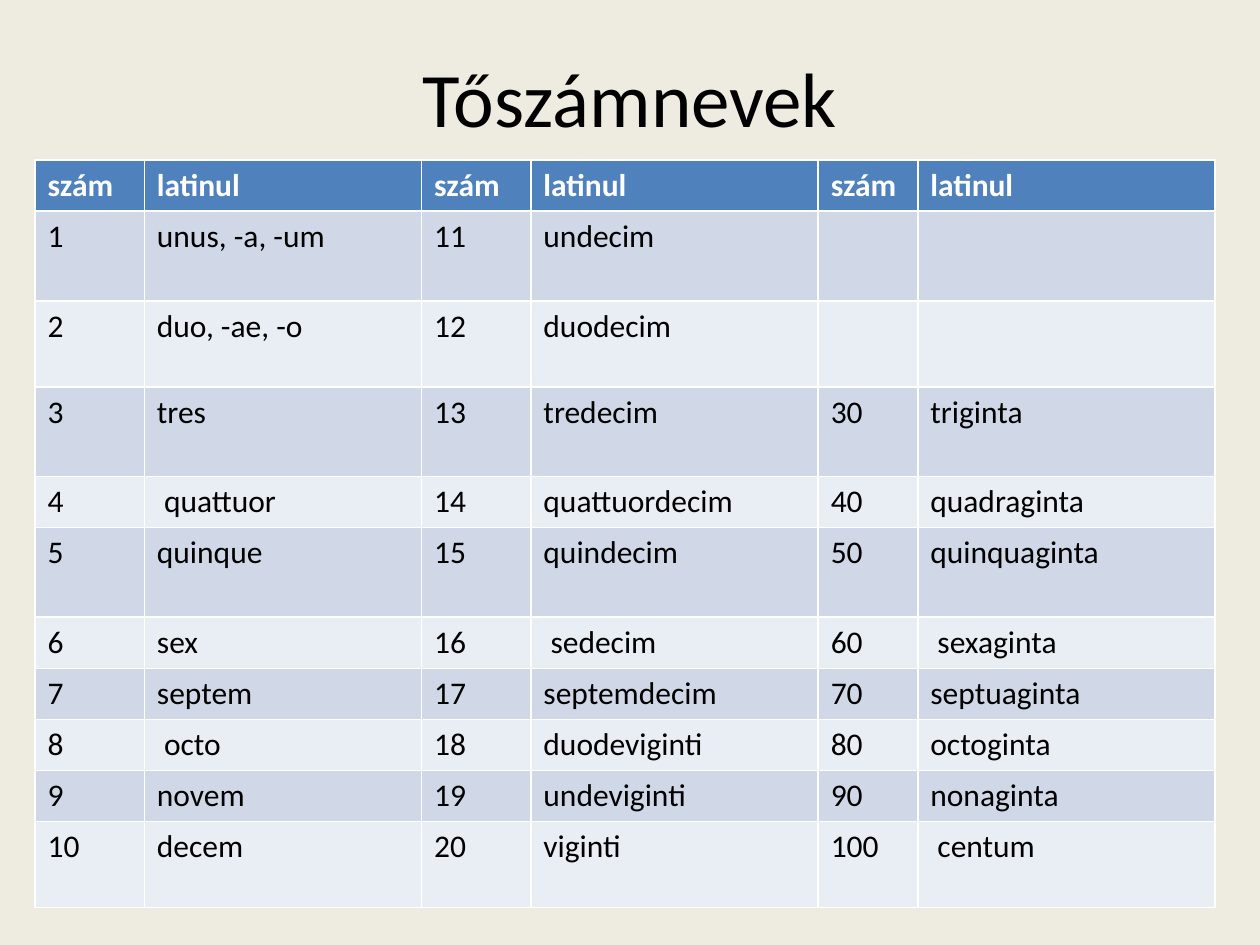
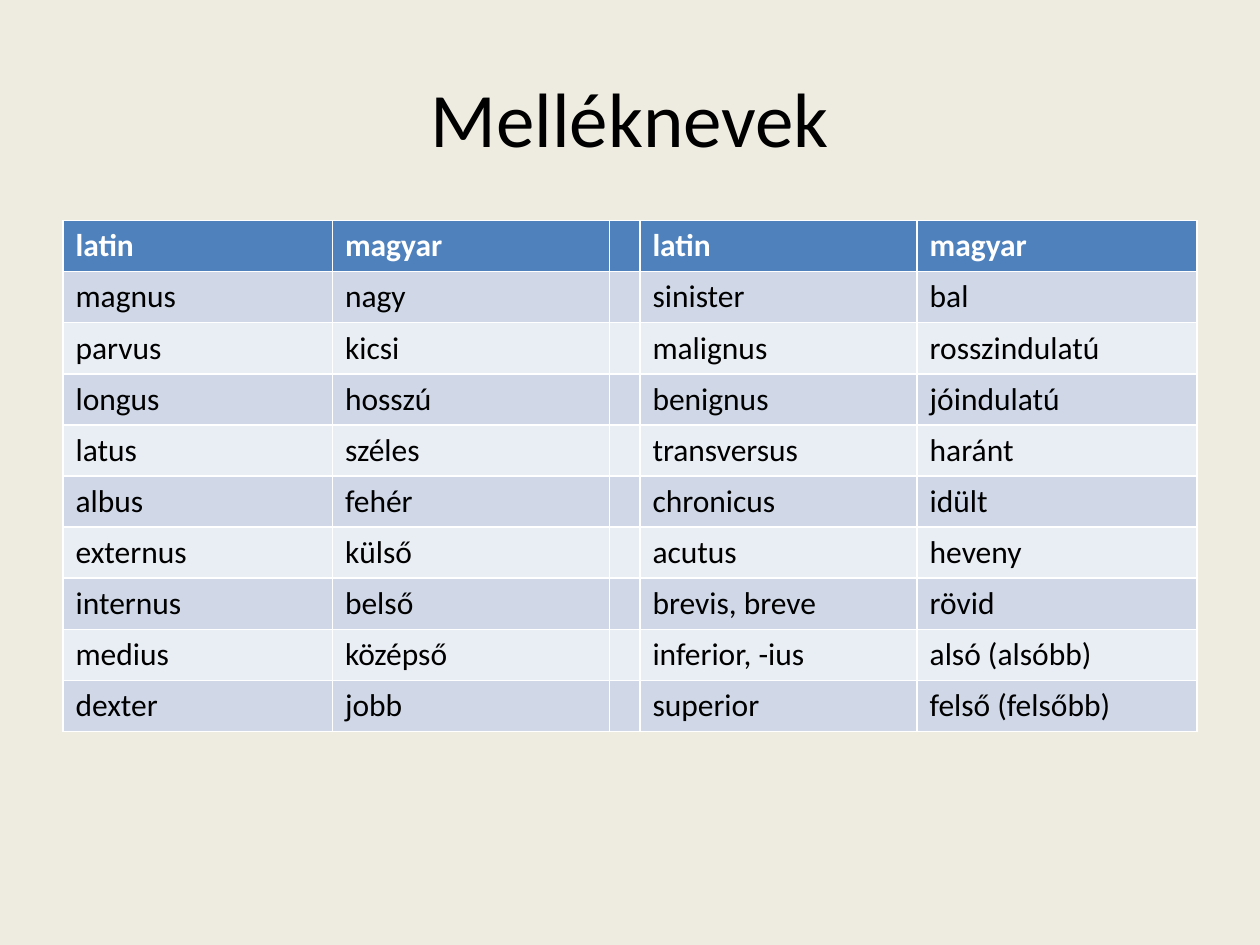
import pptx
import pptx.dml.color
import pptx.enum.text
import pptx.util

Pt = pptx.util.Pt
RGBColor = pptx.dml.color.RGBColor

CREAM = RGBColor(0xEE, 0xEC, 0xE1)
BLACK = RGBColor(0x00, 0x00, 0x00)
WHITE = RGBColor(0xFF, 0xFF, 0xFF)
HEADER_BLUE = RGBColor(0x4F, 0x81, 0xBD)
BAND_DARK = RGBColor(0xD0, 0xD8, 0xE8)
BAND_LIGHT = RGBColor(0xE9, 0xED, 0xF4)

FONT = "Calibri"
TITLE_SIZE = 44
CELL_SIZE = 18
TITLE_ONLY = 5

SINGLE = 29.2
DOUBLE = 49.2
TALL = 51.2

NUMERALS = [
    ("szám", "latinul", "szám", "latinul", "szám", "latinul"),
    ("1", "unus, -a, -um", "11", "undecim", "", ""),
    ("2", "duo, -ae, -o", "12", "duodecim", "", ""),
    ("3", "tres", "13", "tredecim", "30", "triginta"),
    ("4", " quattuor", "14", "quattuordecim", "40", "quadraginta"),
    ("5", "quinque", "15", "quindecim", "50", "quinquaginta"),
    ("6", "sex", "16", " sedecim", "60", " sexaginta"),
    ("7", "septem", "17", "septemdecim", "70", "septuaginta"),
    ("8", " octo", "18", "duodeviginti", "80", "octoginta"),
    ("9", "novem", "19", "undeviginti", "90", "nonaginta"),
    ("10", "decem", "20", "viginti", "100", " centum"),
]
NUMERAL_WIDTHS = [62.5, 158.4, 62.5, 164.2, 56.9, 169.9]
NUMERAL_HEIGHTS = [SINGLE, TALL, DOUBLE, TALL, SINGLE, TALL] + [SINGLE] * 4 + [DOUBLE]

ADJECTIVES = [
    ("latin", "magyar", "", "latin", "magyar"),
    ("magnus", "nagy", "", "sinister", "bal"),
    ("parvus", "kicsi", "", "malignus", "rosszindulatú"),
    ("longus", "hosszú", "", "benignus", "jóindulatú"),
    ("latus", "széles", "", "transversus", "haránt"),
    ("albus", "fehér", "", "chronicus", "idült"),
    ("externus", "külső", "", "acutus", "heveny"),
    ("internus", "belső", "", "brevis, breve", "rövid"),
    ("medius", "középső", "", "inferior, -ius", "alsó (alsóbb)"),
    ("dexter", "jobb", "", "superior", "felső (felsőbb)"),
]
ADJECTIVE_WIDTHS = [154, 158.4, 17.3, 158.4, 159.9]
ADJECTIVE_HEIGHTS = [SINGLE] * len(ADJECTIVES)


def add_run(paragraph, text, size, color, bold=False):
    run = paragraph.add_run()
    run.text = text
    run.font.name = FONT
    run.font.size = Pt(size)
    run.font.bold = bold
    run.font.color.rgb = color


def add_titled_slide(deck, heading, heading_height):
    slide = deck.slides.add_slide(deck.slide_layouts[TITLE_ONLY])
    slide.background.fill.solid()
    slide.background.fill.fore_color.rgb = CREAM
    title = slide.shapes.title
    title.left, title.top = Pt(36), Pt(21.6)
    title.width, title.height = Pt(648), Pt(heading_height)
    title.text_frame.vertical_anchor = pptx.enum.text.MSO_ANCHOR.MIDDLE
    paragraph = title.text_frame.paragraphs[0]
    paragraph.alignment = pptx.enum.text.PP_ALIGN.CENTER
    add_run(paragraph, heading, TITLE_SIZE, BLACK)
    return slide


def row_fill(row_index):
    if row_index == 0:
        return HEADER_BLUE
    return BAND_DARK if row_index % 2 else BAND_LIGHT


def add_word_table(slide, left, top, widths, heights, words):
    frame = slide.shapes.add_table(
        len(heights), len(widths), Pt(left), Pt(top), Pt(sum(widths)), Pt(sum(heights))
    )
    table = frame.table
    for column, width in zip(table.columns, widths):
        column.width = Pt(width)
    for row_index, (row, height) in enumerate(zip(table.rows, heights)):
        row.height = Pt(height)
        is_header = row_index == 0
        for cell, word in zip(row.cells, words[row_index]):
            cell.fill.solid()
            cell.fill.fore_color.rgb = row_fill(row_index)
            if word:
                add_run(
                    cell.text_frame.paragraphs[0],
                    word,
                    CELL_SIZE,
                    WHITE if is_header else BLACK,
                    is_header,
                )


def main():
    deck = pptx.Presentation()
    deck.slide_width, deck.slide_height = Pt(720), Pt(540)

    numerals = add_titled_slide(deck, "Tőszámnevek", 67)
    add_word_table(numerals, 20, 91.5, NUMERAL_WIDTHS, NUMERAL_HEIGHTS, NUMERALS)

    adjectives = add_titled_slide(deck, "Melléknevek", 90)
    add_word_table(adjectives, 36, 126, ADJECTIVE_WIDTHS, ADJECTIVE_HEIGHTS, ADJECTIVES)

    deck.save("out.pptx")


if __name__ == "__main__":
    main()
